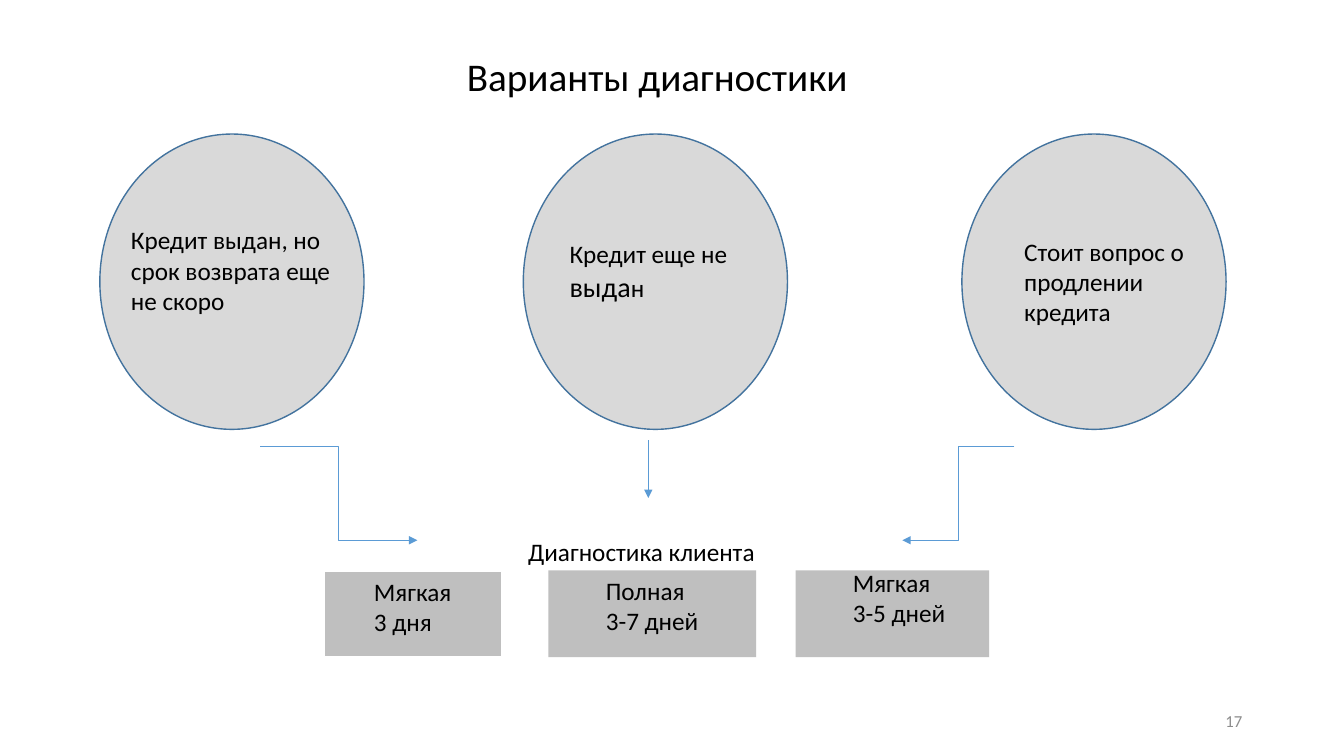
from dataclasses import dataclass

from lxml import etree
from pptx import Presentation
from pptx.dml.color import RGBColor
from pptx.enum import shapes, text
from pptx.oxml import ns
from pptx.util import Inches, Pt


@dataclass(frozen=True)
class Theme:
    font: str = "Calibri"
    ink: str = "000000"
    muted: str = "8C8C8C"
    circle: str = "D9D9D9"
    outline: str = "43739E"
    card: str = "BFBFBF"
    card_edge: str = "FFFFFF"
    arrow: str = "5B9BD5"
    title_size: int = 28
    large_size: int = 20
    body_size: int = 18
    number_size: int = 12


THEME = Theme()


def color(value):
    return RGBColor.from_string(value)


def add_run(paragraph, words, size=THEME.body_size, ink=THEME.ink):
    run = paragraph.add_run()
    run.text = words
    run.font.name = THEME.font
    run.font.size = Pt(size)
    run.font.color.rgb = color(ink)


def add_label(slide, box, lines):
    """Add a text box; each line is a list of (words, size) runs."""
    label = slide.shapes.add_textbox(*map(Inches, box))
    frame = label.text_frame
    frame.word_wrap = True
    for index, runs in enumerate(lines):
        paragraph = frame.add_paragraph() if index else frame.paragraphs[0]
        for words, size in runs:
            add_run(paragraph, words, size)


def add_panel(slide, preset, box, fill, edge=None, width=1):
    panel = slide.shapes.add_shape(preset, *map(Inches, box))
    panel.shadow.inherit = False
    panel.fill.solid()
    panel.fill.fore_color.rgb = color(fill)
    if edge:
        panel.line.color.rgb = color(edge)
        panel.line.width = Pt(width)
    else:
        panel.line.fill.background()


def add_title(slide, box, words):
    title = slide.shapes.title
    title.left, title.top, title.width, title.height = map(Inches, box)
    frame = title.text_frame
    frame.auto_size = text.MSO_AUTO_SIZE.NONE
    frame.vertical_anchor = text.MSO_ANCHOR.TOP
    frame.paragraphs[0].alignment = text.PP_ALIGN.LEFT
    add_run(frame.paragraphs[0], words, THEME.title_size)


def add_situation(slide, box, offset, height, runs):
    """Draw a credit situation as a circle with its text offset inside."""
    left, top, _, _ = box
    add_panel(slide, shapes.MSO_SHAPE.OVAL, box, THEME.circle, THEME.outline)
    add_label(slide, (left + offset[0], top + offset[1], 2.25, height), [runs])


def add_diagnosis(slide, box, offset, width, lines, edge=None):
    """Draw a diagnosis card with its kind and duration offset inside."""
    left, top, _, _ = box
    add_panel(slide, shapes.MSO_SHAPE.RECTANGLE, box, THEME.card, edge, 0.75)
    add_label(slide, (left + offset[0], top + offset[1], width, 0.71),
              [[(line, THEME.body_size)] for line in lines])


def add_arrow(slide, kind, start, end):
    arrow = slide.shapes.add_connector(kind, *map(Inches, start + end))
    arrow.line.color.rgb = color(THEME.arrow)
    arrow.line.width = Pt(0.5)
    etree.SubElement(arrow.line._get_or_add_ln(), ns.qn("a:tailEnd"), type="triangle")
    etree.SubElement(arrow._element.spPr, ns.qn("a:effectLst"))


def add_page_number(slide, box, number):
    page = slide.shapes.add_textbox(*map(Inches, box))
    frame = page.text_frame
    frame.word_wrap = True
    frame.vertical_anchor = text.MSO_ANCHOR.MIDDLE
    frame.paragraphs[0].alignment = text.PP_ALIGN.RIGHT
    add_run(frame.paragraphs[0], number, THEME.number_size, THEME.muted)


def add_situations(slide, top):
    body, large = THEME.body_size, THEME.large_size
    situations = [
        (0.99, (0.21, 0.85), 1.01,
         [("Кредит выдан, но срок возврата еще не скоро", body)]),
        (5.19, (0.36, 0.99), 0.74,
         [("Кредит еще не ", body), ("выда", large), ("н", body)]),
        (9.54, (0.52, 0.96), 1.01,
         [("Стоит вопрос о продлении кредита", body)]),
    ]
    for left, offset, height, runs in situations:
        add_situation(slide, (left, top, 2.62, 2.93), offset, height, runs)


def add_arrows(slide, top, bottom):
    elbow, straight = shapes.MSO_CONNECTOR.ELBOW, shapes.MSO_CONNECTOR.STRAIGHT
    add_arrow(slide, elbow, (2.58, top), (4.14, bottom))
    add_arrow(slide, elbow, (10.06, top), (8.95, bottom))
    add_arrow(slide, straight, (6.43, top - 0.06), (6.43, bottom - 0.42))


def add_diagnoses(slide, top):
    add_label(slide, (5.14, top - 0.39, 3.03, 0.4),
              [[("Диагностика клиента", THEME.body_size)]])
    add_diagnosis(slide, (3.22, top + 0.01, 1.75, 0.84), (0.39, 0), 1.58,
                  ["Мягкая", "3 дня"], THEME.card_edge)
    add_diagnosis(slide, (5.44, top, 2.06, 0.86), (0.47, 0), 1.18,
                  ["Полная", "3-7 дней"])
    add_diagnosis(slide, (7.89, top, 1.92, 0.86), (0.47, -0.08), 1.84,
                  ["Мягкая", "3-5 дней"])


def main():
    deck = Presentation()
    deck.slide_width, deck.slide_height = Inches(13.33), Inches(7.5)
    slide = deck.slides.add_slide(deck.slide_layouts.get_by_name("Title Only"))
    add_title(slide, (4.53, 0.47, 8.64, 0.57), "Варианты диагностики")
    add_situations(slide, 1.33)
    add_arrows(slide, 4.43, 5.36)
    add_diagnoses(slide, 5.66)
    add_page_number(slide, (9.42, 6.95, 3, 0.4), "17")
    deck.save("out.pptx")


if __name__ == "__main__":
    main()
